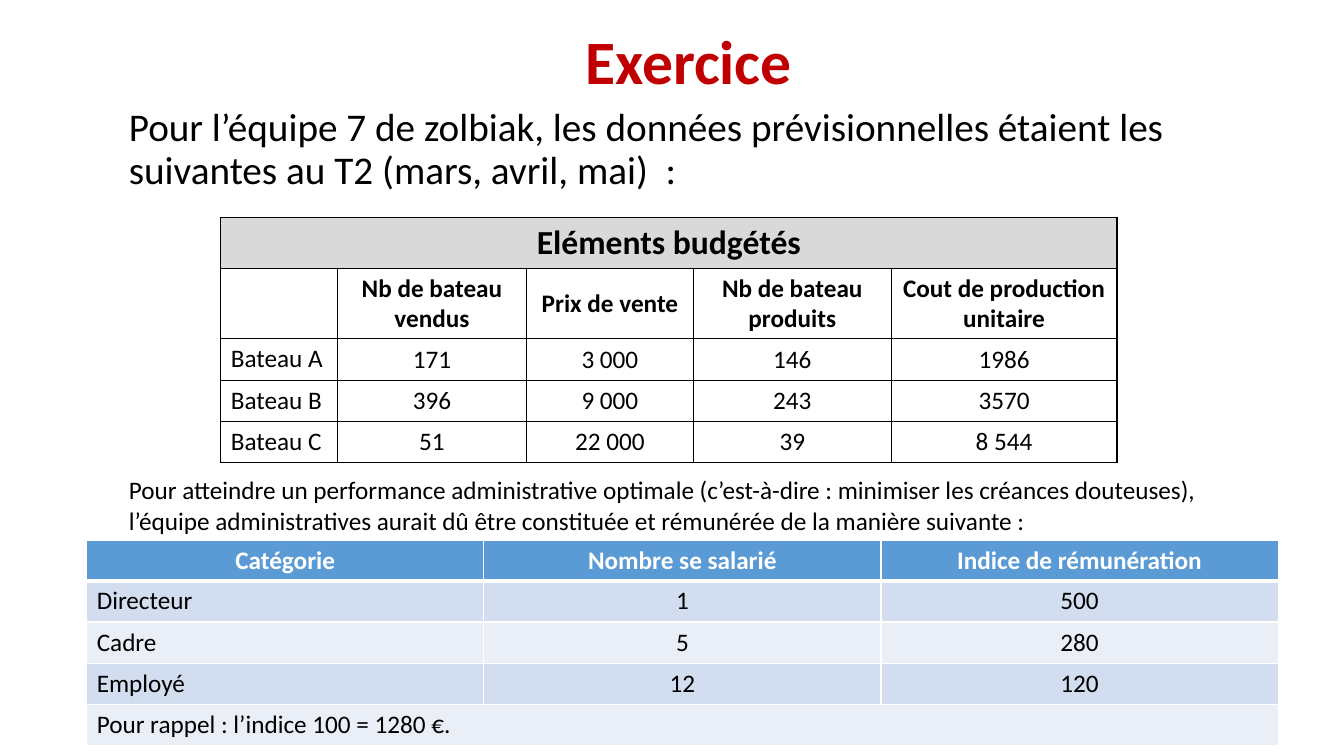
from lxml.etree import SubElement
from pptx import Presentation
from pptx.dml.color import RGBColor
from pptx.enum.text import MSO_ANCHOR, MSO_AUTO_SIZE, PP_ALIGN
from pptx.oxml.ns import qn
from pptx.util import Inches, Pt

SLIDE_WIDTH, SLIDE_HEIGHT = Inches(13.33), Inches(7.5)
BLACK, WHITE = "000000", "FFFFFF"
BUDGET_TITLE = "Eléments budgétés"
BUDGET_ROWS = [
    [BUDGET_TITLE, "", "", "", ""],
    ["", "Nb de bateau vendus", "Prix de vente", "Nb de bateau produits", "Cout de production unitaire"],
    ["Bateau A", "171", "3 000", "146", "1986"],
    ["Bateau B", "396", "9 000", "243", "3570"],
    ["Bateau C", "51", "22 000", "39", "8 544"],
]
STAFF_ROWS = [
    ["Catégorie", "Nombre se salarié", "Indice de rémunération"],
    ["Directeur", "1", "500"],
    ["Cadre", "5", "280"],
    ["Employé", "12", "120"],
    ["Pour rappel : l’indice 100 = 1280 €.", "", ""],
]


def across(percent):
    return round(SLIDE_WIDTH * percent / 100)


def down(percent):
    return round(SLIDE_HEIGHT * percent / 100)


def color(hex_value):
    return RGBColor.from_string(hex_value)


def write(frame, text, size, hex_value=BLACK, bold=False, align=PP_ALIGN.LEFT):
    paragraph = frame.paragraphs[0]
    paragraph.alignment = align
    run = paragraph.add_run()
    run.text = text
    run.font.name = "Calibri"
    run.font.size = Pt(size)
    run.font.bold = bold
    run.font.color.rgb = color(hex_value)
    return paragraph


def add_title(slide, text):
    title = slide.shapes.title
    title.left, title.top = across(8.1), down(-1.07)
    title.width, title.height = across(86.27), down(19.33)
    frame = title.text_frame
    frame.auto_size = MSO_AUTO_SIZE.NONE
    frame.vertical_anchor = MSO_ANCHOR.MIDDLE
    write(frame, text, 44, "C00000", True, PP_ALIGN.CENTER).line_spacing = 0.9


def add_text(slide, text, size, left, top, width, height):
    box = slide.shapes.add_textbox(across(left), down(top), across(width), down(height))
    box.text_frame.word_wrap = True
    return write(box.text_frame, text, size)


def set_borders(cell, hex_value, **widths):
    properties = cell._tc.get_or_add_tcPr()
    for side in "LRTB":
        line = SubElement(properties, qn(f"a:ln{side}"), w=str(Pt(widths.get(side, 1))))
        fill = SubElement(line, qn("a:solidFill"))
        SubElement(fill, qn("a:srgbClr"), val=hex_value)


def set_fill(cell, hex_value):
    if hex_value:
        cell.fill.solid()
        cell.fill.fore_color.rgb = color(hex_value)
    else:
        cell.fill.background()


def add_grid(slide, left, top, column_widths, row_heights):
    table = slide.shapes.add_table(
        len(row_heights), len(column_widths), across(left), down(top),
        across(sum(column_widths)), down(sum(row_heights)),
    ).table
    table.horz_banding = False
    for column, width in zip(table.columns, column_widths):
        column.width = across(width)
    for row, height in zip(table.rows, row_heights):
        row.height = down(height)
    return table


def add_budget(slide):
    table = add_grid(slide, 16.43, 28.8, [8.7, 14.03, 12.45, 14.7, 16.8], [6.67, 9.33] + [5.47] * 3)
    table.first_row = False
    for r, values in enumerate(BUDGET_ROWS):
        for c, value in enumerate(values):
            cell = table.cell(r, c)
            set_borders(cell, BLACK)
            set_fill(cell, "D9D9D9" if r == 0 else None)
            is_boat = r > 1 and c == 0
            if not is_boat:
                cell.vertical_anchor = MSO_ANCHOR.MIDDLE
            if value:
                write(cell.text_frame, value, 24 if r == 0 else 18, bold=r < 2,
                      align=PP_ALIGN.LEFT if is_boat else PP_ALIGN.CENTER)
    table.cell(0, 0).merge(table.cell(0, 4))


def add_staff(slide):
    table = add_grid(slide, 6.45, 71.47, [29.55] * 3, [5.33] + [5.47] * 4)
    for r, values in enumerate(STAFF_ROWS):
        is_header = r == 0
        rules = {0: {"B": 3}, 1: {"T": 3}}.get(r, {})
        band = "5B9BD5" if is_header else ("EAEFF7", "D2DEEF")[r % 2]
        for c, value in enumerate(values):
            cell = table.cell(r, c)
            set_borders(cell, WHITE, **rules)
            set_fill(cell, band)
            if value:
                write(cell.text_frame, value, 18, WHITE if is_header else BLACK, is_header,
                      PP_ALIGN.CENTER if is_header or c else PP_ALIGN.LEFT)
    table.cell(4, 0).merge(table.cell(4, 2))


def main():
    deck = Presentation()
    deck.slide_width, deck.slide_height = SLIDE_WIDTH, SLIDE_HEIGHT
    slide = deck.slides.add_slide(deck.slide_layouts[5])
    add_title(slide, "Exercice")
    intro = add_text(
        slide,
        "Pour l’équipe 7 de zolbiak, les données prévisionnelles étaient les "
        "suivantes au T2 (mars, avril, mai)  :",
        28, 8.85, 13.6, 86.27, 30.4,
    )
    intro.line_spacing = 0.9
    intro.space_before = Pt(10)
    add_budget(slide)
    add_text(
        slide,
        "Pour atteindre un performance administrative optimale (c’est-à-dire : "
        "minimiser les créances douteuses), l’équipe administratives aurait dû "
        "être constituée et rémunérée de la manière suivante :",
        18, 8.85, 62.13, 82.3, 13.47,
    )
    add_staff(slide)
    deck.save("out.pptx")


if __name__ == "__main__":
    main()
